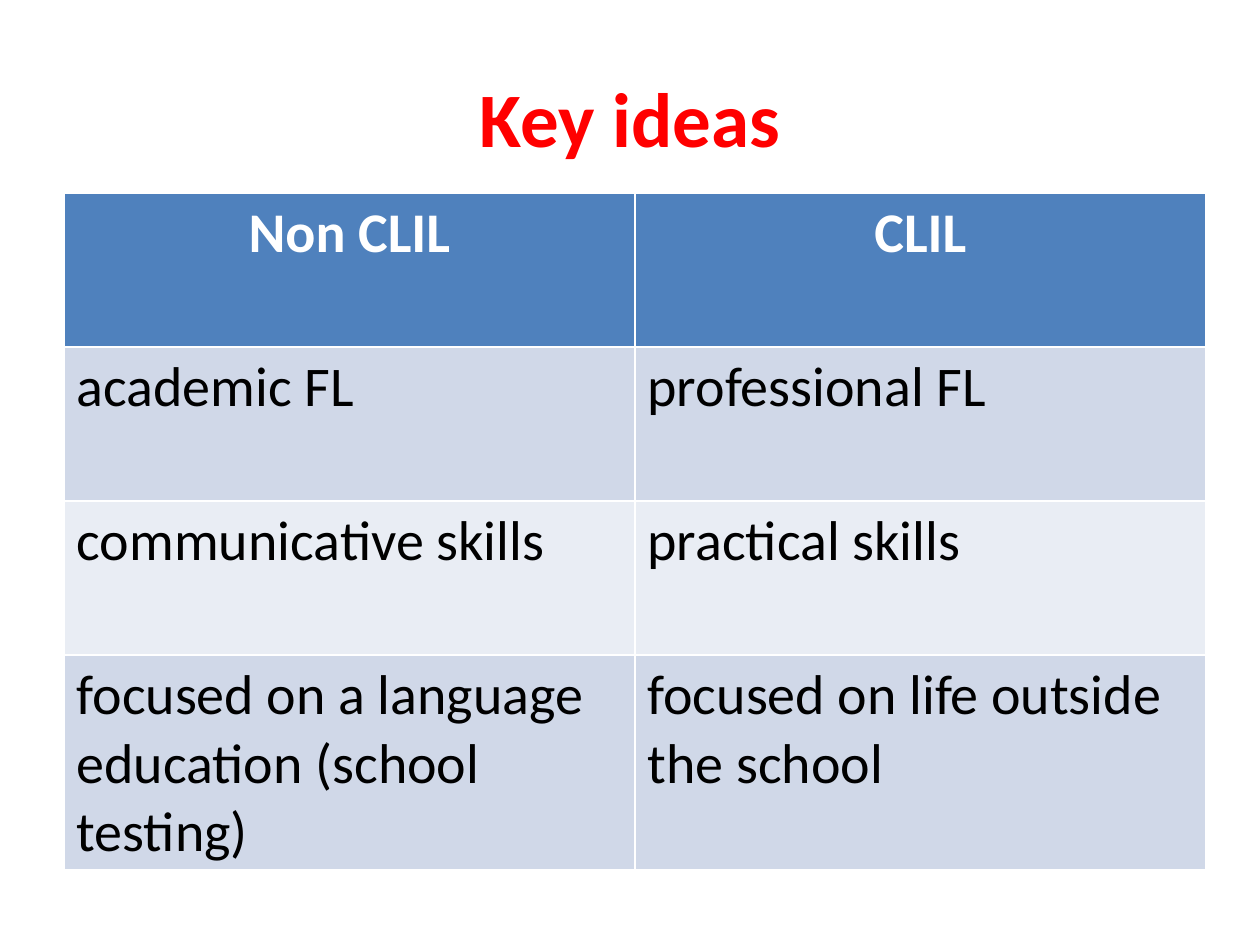
from pptx import Presentation
from pptx.dml.color import RGBColor
from pptx.enum.text import MSO_ANCHOR, PP_ALIGN as Align
from pptx.util import Emu, Pt

# Content
TITLE = "Key ideas"
ROWS = [
    ("Non CLIL", "CLIL"),
    ("academic FL", "professional FL"),
    ("communicative skills", "practical skills"),
    ("focused on a language education (school testing)",
     "focused on life outside the school"),
]

# Layout in px, 126 to the inch
SLIDE = (1260, 945)
TITLE_BOX = (63, 38, 1134, 157)
TABLE_BOX = (64, 193, 1142, 677)
ROW_HEIGHT = 154
HEADER_FILL = "4F81BD"
BAND_FILLS = ("D0D8E8", "E9EDF4")


def px(length):
    return Emu(round(length * 914400 / 126))


def color(hex_text):
    return RGBColor.from_string(hex_text)


def write(frame, text, size, hex_text, bold, align):
    frame.text = text
    para = frame.paragraphs[0]
    para.alignment = align
    font = para.runs[0].font
    font.name, font.size, font.bold = "Calibri", Pt(size), bold
    font.color.rgb = color(hex_text)


deck = Presentation()
deck.slide_width, deck.slide_height = map(px, SLIDE)
page = deck.slides.add_slide(deck.slide_layouts[6])

# Title
title = page.shapes.add_textbox(*map(px, TITLE_BOX)).text_frame
title.word_wrap = True
title.vertical_anchor = MSO_ANCHOR.MIDDLE
write(title, TITLE, 44, "FF0000", True, Align.CENTER)

# Comparison table; the default style draws the white borders
table = page.shapes.add_table(len(ROWS), len(ROWS[0]), *map(px, TABLE_BOX)).table
for row_index, texts in enumerate(ROWS):
    header = row_index == 0
    table.rows[row_index].height = px(ROW_HEIGHT)
    for column_index, text in enumerate(texts):
        cell = table.cell(row_index, column_index)
        cell.fill.solid()
        cell.fill.fore_color.rgb = color(
            HEADER_FILL if header else BAND_FILLS[(row_index - 1) % 2])
        write(cell.text_frame, text, 32, "FFFFFF" if header else "000000",
              header, Align.CENTER if header else Align.LEFT)

deck.save("out.pptx")
